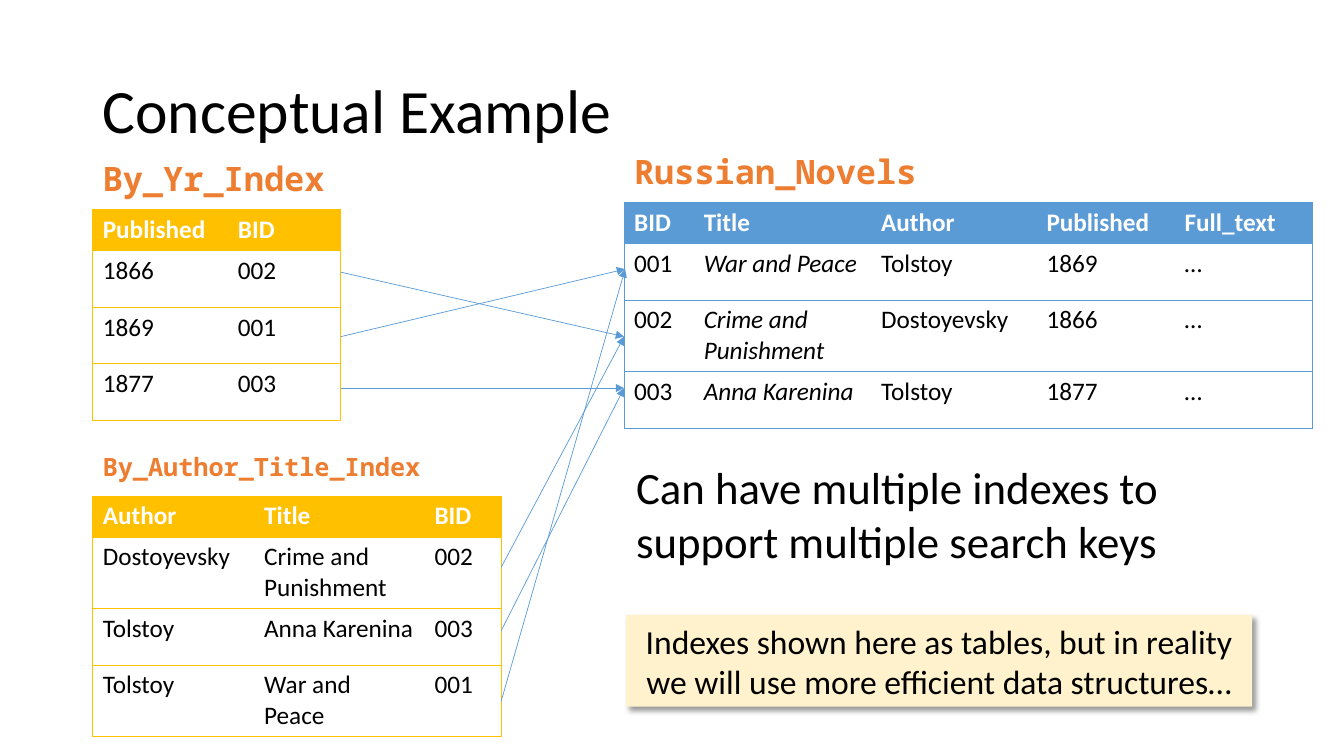
from dataclasses import dataclass

from lxml import etree
from pptx import Presentation
from pptx.dml.color import RGBColor
from pptx.enum.shapes import MSO_CONNECTOR, MSO_SHAPE
from pptx.enum.text import MSO_ANCHOR, MSO_AUTO_SIZE, PP_ALIGN
from pptx.oxml.ns import qn
from pptx.util import Inches, Pt

RECTANGLE = MSO_SHAPE.RECTANGLE
STRAIGHT = MSO_CONNECTOR.STRAIGHT
MIDDLE = MSO_ANCHOR.MIDDLE
GROW = MSO_AUTO_SIZE.SHAPE_TO_FIT_TEXT
NO_AUTOSIZE = MSO_AUTO_SIZE.NONE
CENTER = PP_ALIGN.CENTER

COLORS = {
    "black": "000000",
    "white": "FFFFFF",
    "blue": "5B9BD5",
    "gold": "FFC000",
    "orange": "ED7D31",
    "cream": "FFF2CC",
}
BODY_FONT = "Calibri"
CODE_FONT = "Noto Sans Mono"
LINE_WIDTH = Pt(0.5)
HEADER_HEIGHT, ROW_HEIGHT = 0.4, 0.56


@dataclass
class Label:
    text: str
    left: float
    top: float
    width: float
    height: float
    size: int
    font: str = BODY_FONT
    color: str = "black"
    bold: bool = False
    wrap: bool = True


@dataclass
class DataTable:
    left: float
    top: float
    color: str
    widths: list[float]
    rows: list[list[str]]
    italic_column: int | None = None


@dataclass
class Pointer:
    """Arrow from an index entry to the novel with the given BID."""
    left: float
    top: float
    bid: str


TABLES = [
    DataTable(6.19, 2.01, "blue", [0.69, 1.76, 1.64, 1.37, 1.37], [
        ["BID", "Title", "Author", "Published", "Full_text"],
        ["001", "War and Peace", "Tolstoy", "1869", "…"],
        ["002", "Crime and Punishment", "Dostoyevsky", "1866", "…"],
        ["003", "Anna Karenina", "Tolstoy", "1877", "…"],
    ], italic_column=1),
    DataTable(0.92, 2.08, "gold", [1.34, 1.12], [
        ["Published", "BID"],
        ["1866", "002"],
        ["1869", "001"],
        ["1877", "003"],
    ]),
    DataTable(0.92, 4.92, "gold", [1.6, 1.69, 0.76], [
        ["Author", "Title", "BID"],
        ["Dostoyevsky", "Crime and Punishment", "002"],
        ["Tolstoy", "Anna Karenina", "003"],
        ["Tolstoy", "War and Peace", "001"],
    ]),
]

NOVEL_POINTS = {"001": (6.2, 2.67), "002": (6.19, 3.34), "003": (6.19, 3.85)}
POINTERS = [
    Pointer(3.38, 2.7, "002"),
    Pointer(3.38, 3.34, "001"),
    Pointer(3.38, 3.85, "003"),
    Pointer(4.97, 5.63, "002"),
    Pointer(4.97, 6.26, "003"),
    Pointer(4.97, 6.96, "001"),
]

TITLE = Label("Conceptual Example", 0.92, 0.4, 11.5, 1.45, 44)
LABELS = [
    Label("Russian_Novels", 6.19, 1.45, 3.05, 0.5, 24, CODE_FONT, "orange", True, False),
    Label("By_Yr_Index", 0.92, 1.52, 2.44, 0.5, 24, CODE_FONT, "orange", True, False),
    Label("By_Author_Title_Index", 0.92, 4.43, 3.4, 0.4, 18, CODE_FONT, "orange", True, False),
    Label("Can have multiple indexes to support multiple search keys", 6.21, 4.51, 6.81, 1.18, 32),
]
NOTE = Label("Indexes shown here as tables, but in reality we will use more efficient "
             "data structures…", 6.21, 6.1, 6.21, 0.91, 24)


def rgb(name: str) -> RGBColor:
    return RGBColor.from_string(COLORS[name])


def format_text(frame, size: int, font: str, color: str, bold=False, italic=False) -> None:
    for paragraph in frame.paragraphs:
        for run in paragraph.runs:
            run.font.size = Pt(size)
            run.font.name = font
            run.font.color.rgb = rgb(color)
            run.font.bold = bold
            run.font.italic = italic


def fill_label(shape, label: Label) -> None:
    frame = shape.text_frame
    frame.text = label.text
    frame.word_wrap = label.wrap
    frame.auto_size = GROW
    format_text(frame, label.size, label.font, label.color, label.bold)


def add_label(slide, label: Label):
    shape = slide.shapes.add_textbox(
        Inches(label.left), Inches(label.top), Inches(label.width), Inches(label.height))
    fill_label(shape, label)
    return shape


def add_title(slide, label: Label) -> None:
    frame = add_label(slide, label).text_frame
    frame.auto_size = NO_AUTOSIZE
    frame.vertical_anchor = MIDDLE
    frame.paragraphs[0].line_spacing = 0.9


def add_note(slide, label: Label) -> None:
    shape = slide.shapes.add_shape(
        RECTANGLE, Inches(label.left), Inches(label.top), Inches(label.width), Inches(label.height))
    shape.fill.solid()
    shape.fill.fore_color.rgb = rgb("cream")
    shape.line.fill.background()
    shape.shadow.inherit = False
    effects = shape._element.spPr.find(qn("a:effectLst"))
    shadow = etree.SubElement(effects, qn("a:outerShdw"), blurRad=str(Pt(4)), dist=str(Pt(3)),
                              dir="2700000", algn="tl", rotWithShape="0")
    shade = etree.SubElement(shadow, qn("a:srgbClr"), val=COLORS["black"])
    etree.SubElement(shade, qn("a:alpha"), val="40000")
    fill_label(shape, label)
    shape.text_frame.paragraphs[0].alignment = CENTER


def set_borders(cell, color: str, first: bool, last: bool) -> None:
    """Rule every row and the outer sides, leaving inner columns open."""
    properties = cell._tc.get_or_add_tcPr()
    sides = {"lnL": first, "lnR": last, "lnT": True, "lnB": True}
    for position, (side, visible) in enumerate(sides.items()):
        border = etree.Element(qn(f"a:{side}"), w=str(LINE_WIDTH))
        if visible:
            fill = etree.SubElement(border, qn("a:solidFill"))
            etree.SubElement(fill, qn("a:srgbClr"), val=COLORS[color])
        else:
            etree.SubElement(border, qn("a:noFill"))
        properties.insert(position, border)


def add_data_table(slide, data: DataTable) -> None:
    heights = [HEADER_HEIGHT] + [ROW_HEIGHT] * (len(data.rows) - 1)
    table = slide.shapes.add_table(
        len(data.rows), len(data.widths), Inches(data.left), Inches(data.top),
        Inches(sum(data.widths)), Inches(sum(heights))).table
    table.horz_banding = False
    for column, width in zip(table.columns, data.widths):
        column.width = Inches(width)
    for row_index, texts in enumerate(data.rows):
        table.rows[row_index].height = Inches(heights[row_index])
        header = row_index == 0
        for column_index, text in enumerate(texts):
            cell = table.cell(row_index, column_index)
            cell.text_frame.text = text
            format_text(cell.text_frame, 18, BODY_FONT, "white" if header else "black",
                        header, not header and column_index == data.italic_column)
            cell.fill.solid()
            cell.fill.fore_color.rgb = rgb(data.color if header else "white")
            set_borders(cell, data.color, column_index == 0, column_index == len(texts) - 1)


def add_pointer(slide, pointer: Pointer) -> None:
    end = NOVEL_POINTS[pointer.bid]
    connector = slide.shapes.add_connector(
        STRAIGHT, Inches(pointer.left), Inches(pointer.top), Inches(end[0]), Inches(end[1]))
    connector.line.color.rgb = rgb("blue")
    connector.line.width = LINE_WIDTH
    etree.SubElement(connector.line._get_or_add_ln(), qn("a:tailEnd"), type="triangle")
    etree.SubElement(connector._element.spPr, qn("a:effectLst"))


def main() -> None:
    presentation = Presentation()
    presentation.slide_width, presentation.slide_height = Inches(13.33), Inches(7.5)
    slide = presentation.slides.add_slide(presentation.slide_layouts[6])
    add_title(slide, TITLE)
    for data in TABLES:
        add_data_table(slide, data)
    for pointer in POINTERS:
        add_pointer(slide, pointer)
    for label in LABELS:
        add_label(slide, label)
    add_note(slide, NOTE)
    presentation.save("out.pptx")


if __name__ == "__main__":
    main()
